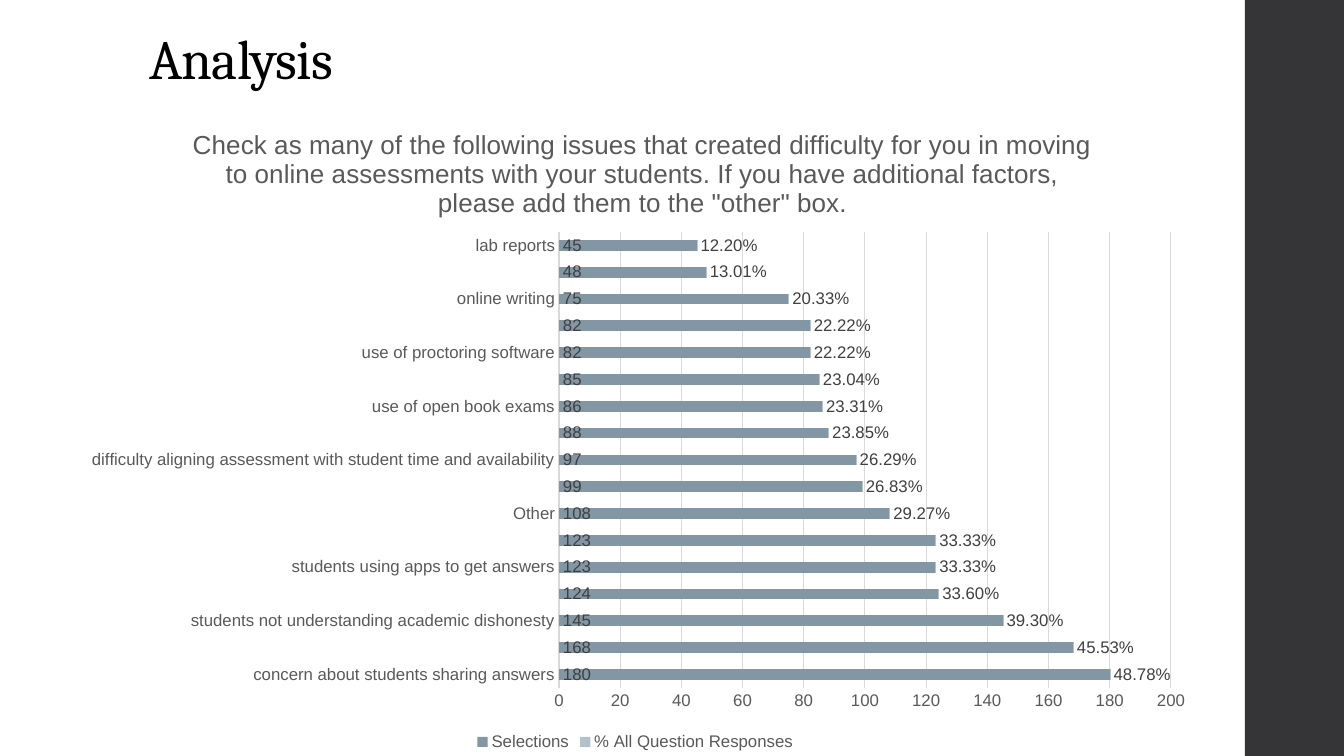
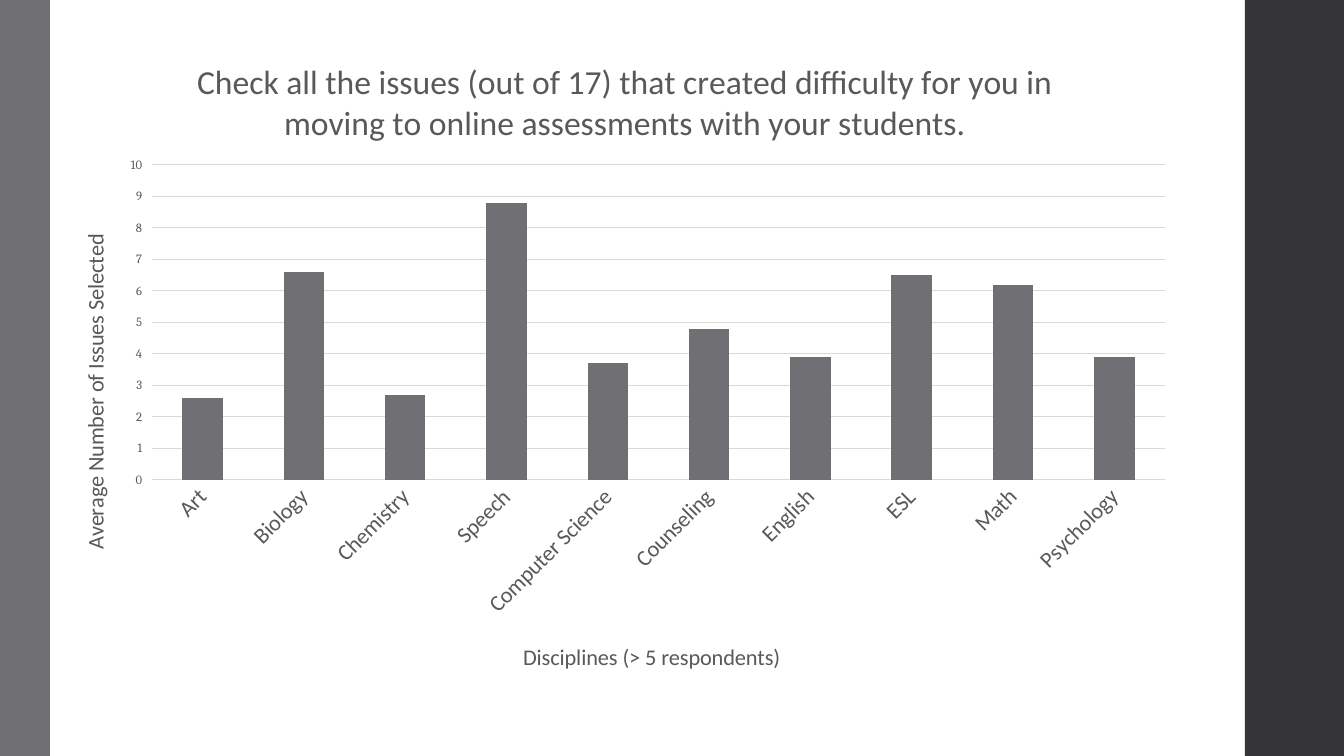
from dataclasses import dataclass

from lxml import etree
from pptx import Presentation
from pptx.chart.data import CategoryChartData
from pptx.dml.color import RGBColor
from pptx.enum.chart import XL_CHART_TYPE, XL_LABEL_POSITION, XL_LEGEND_POSITION, XL_TICK_MARK
from pptx.enum.shapes import MSO_SHAPE
from pptx.enum.text import MSO_ANCHOR, MSO_AUTO_SIZE, PP_ALIGN
from pptx.oxml.ns import qn
from pptx.util import Emu, Pt

PX = 914400 / 100.8
RECTANGLE = MSO_SHAPE.RECTANGLE
BAR_STACKED = XL_CHART_TYPE.BAR_STACKED
COLUMN_CLUSTERED = XL_CHART_TYPE.COLUMN_CLUSTERED
INSIDE_BASE = XL_LABEL_POSITION.INSIDE_BASE
LEGEND_BOTTOM = XL_LEGEND_POSITION.BOTTOM
TICK_NONE = XL_TICK_MARK.NONE
TICK_OUTSIDE = XL_TICK_MARK.OUTSIDE
TITLE_ONLY, BLANK = 5, 6


@dataclass(frozen=True)
class Theme:
    background: str = "FFFFFF"
    dark_band: str = "353537"
    gray: str = "6F6F74"
    blue_gray: str = "8296A4"
    pale_blue: str = "B3C1CC"
    grid: str = "D9D9D9"
    chart_text: str = "595959"
    label_text: str = "404040"
    title_text: str = "000000"
    heading_font: str = "Cambria"
    survey_font: str = "Arial"
    discipline_font: str = "Calibri"
    title_size: float = 39.6
    survey_title_size: float = 18.6
    discipline_title_size: int = 24
    axis_title_size: int = 16
    survey_label_size: int = 12
    value_label_size: int = 9


THEME = Theme()


@dataclass(frozen=True)
class Box:
    left: int
    top: int
    width: int = 0
    height: int = 0

    def emu(self):
        return [Emu(round(length * PX)) for length in (self.left, self.top, self.width, self.height)]


SLIDE = Box(0, 0, 1344, 756)

ISSUES = [
    ("concern about students sharing answers", 180, 0.4878),
    ("not all students have access to specialized equipment (microscopes, keyboards, etc)", 168, 0.4553),
    ("students not understanding academic dishonesty", 145, 0.393),
    ("time requirement for students", 124, 0.336),
    ("students using apps to get answers", 123, 0.3333),
    ("students plagiarizing work online while taking assessments", 123, 0.3333),
    ("Other", 108, 0.2927),
    ("grades on various assessments higher online than they were in person", 99, 0.2683),
    ("difficulty aligning assessment with student time and availability", 97, 0.2629),
    ("issues with multiple choice quizzes and exams", 88, 0.2385),
    ("use of open book exams", 86, 0.2331),
    ("student authentication guaranteeing student work is student being graded", 85, 0.2304),
    ("use of proctoring software", 82, 0.2222),
    ("adequate use of discussion boards", 82, 0.2222),
    ("online writing", 75, 0.2033),
    ("no issues with online assessment", 48, 0.1301),
    ("lab reports", 45, 0.122),
]

DISCIPLINES = [
    ("Art", 2.6), ("Biology", 6.6), ("Chemistry", 2.7), ("Speech", 8.8),
    ("Computer Science", 3.7), ("Counseling", 4.8), ("English", 3.9),
    ("ESL", 6.5), ("Math", 6.2), ("Psychology", 3.9),
]


def color(value):
    return RGBColor.from_string(value)


def style_font(font, name, size, text_color):
    font.name = name
    font.size = Pt(size)
    font.bold = False
    font.color.rgb = color(text_color)


def add_band(slide, box, fill):
    shape = slide.shapes.add_shape(RECTANGLE, *box.emu())
    shape.shadow.inherit = False
    shape.fill.solid()
    shape.fill.fore_color.rgb = color(fill)
    shape.line.fill.background()


def new_slide(presentation, layout):
    slide = presentation.slides.add_slide(presentation.slide_layouts[layout])
    slide.background.fill.solid()
    slide.background.fill.fore_color.rgb = color(THEME.background)
    add_band(slide, Box(1245, 0, 99, SLIDE.height), THEME.dark_band)
    return slide


def set_title(slide, box, text):
    title = slide.shapes.title
    title.left, title.top, title.width, title.height = box.emu()
    frame = title.text_frame
    frame.word_wrap = True
    frame.auto_size = MSO_AUTO_SIZE.NONE
    frame.vertical_anchor = MSO_ANCHOR.BOTTOM
    paragraph = frame.paragraphs[0]
    paragraph.alignment = PP_ALIGN.LEFT
    paragraph.line_spacing = 0.9
    run = paragraph.add_run()
    run.text = text
    style_font(run.font, THEME.heading_font, THEME.title_size, THEME.title_text)
    for properties in title.element.iter(qn("a:rPr")):
        properties.set("spc", "-50")


def place_part(element, predecessor, chart_box, part_box, inner=False):
    for layout in element.findall(qn("c:layout")):
        element.remove(layout)
    layout = etree.Element(qn("c:layout"))
    manual = etree.SubElement(layout, qn("c:manualLayout"))
    settings = [("layoutTarget", "inner")] if inner else []
    settings += [("xMode", "edge"), ("yMode", "edge"),
                 ("x", part_box.left / chart_box.width), ("y", part_box.top / chart_box.height)]
    if part_box.width:
        settings += [("w", part_box.width / chart_box.width), ("h", part_box.height / chart_box.height)]
    for tag, value in settings:
        etree.SubElement(manual, qn("c:" + tag)).set("val", str(value))
    position = element.index(element.find(qn(predecessor))) + 1 if predecessor else 0
    element.insert(position, layout)


def set_chart_text(title, chart_box, part_box, text, font_name, size, rotation=0):
    paragraph = title.text_frame.paragraphs[0]
    style_font(paragraph.font, font_name, size, THEME.chart_text)
    run = paragraph.add_run()
    run.text = text
    style_font(run.font, font_name, size, THEME.chart_text)
    for body in title.element.iter(qn("a:bodyPr")):
        body.set("rot", str(rotation * 60000))
    place_part(title.element, "c:tx", chart_box, part_box)


def add_bar_chart(slide, box, plot_box, kind, rows, series_styles, scale, font_name):
    data = CategoryChartData()
    categories, *columns = zip(*rows)
    data.categories = categories
    for (name, fill, number_format), values in zip(series_styles, columns):
        data.add_series(name, values, number_format)
    chart = slide.shapes.add_chart(kind, *box.emu(), data).chart
    style_font(chart.font, font_name, 10, THEME.title_text)
    chart.has_legend = False
    plot = chart.plots[0]
    plot.gap_width = 150
    plot.vary_by_categories = False
    for series, (name, fill, number_format) in zip(plot.series, series_styles):
        series.format.fill.solid()
        series.format.fill.fore_color.rgb = color(fill)
        series.invert_if_negative = False
    category_axis, value_axis = chart.category_axis, chart.value_axis
    category_axis.major_tick_mark = TICK_NONE
    category_axis.has_major_gridlines = False
    value_axis.minimum_scale = 0
    value_axis.maximum_scale, value_axis.major_unit = scale
    value_axis.has_major_gridlines = True
    value_axis.format.line.fill.background()
    for line in (category_axis.format.line, value_axis.major_gridlines.format.line):
        line.color.rgb = color(THEME.grid)
        line.width = Pt(0.75)
    place_part(chart.element.find(".//" + qn("c:plotArea")), None, box, plot_box, inner=True)
    return chart


def survey_chart(slide, box):
    series_styles = [
        ("Selections", THEME.blue_gray, "General"),
        ("% All Question Responses", THEME.pale_blue, "0.00%"),
    ]
    font_name, size = THEME.survey_font, THEME.survey_label_size
    chart = add_bar_chart(slide, box, Box(489, 135, 612, 456), BAR_STACKED,
                          ISSUES, series_styles, (200, 20), font_name)
    chart.plots[0].overlap = 100
    chart.has_title = True
    set_chart_text(
        chart.chart_title, box, Box(118, 25),
        "Check as many of the following issues that created difficulty for you in moving "
        "to online assessments with your students. If you have additional factors, "
        'please add them to the "other" box.',
        font_name, THEME.survey_title_size)
    for axis in (chart.category_axis, chart.value_axis):
        axis.major_tick_mark = TICK_NONE
        style_font(axis.tick_labels.font, font_name, size, THEME.chart_text)
    for series, (name, fill, number_format) in zip(chart.plots[0].series, series_styles):
        labels = series.data_labels
        labels.show_value = True
        labels.number_format = number_format
        labels.number_format_is_linked = False
        labels.position = INSIDE_BASE
        style_font(labels.font, font_name, size, THEME.label_text)
    chart.has_legend = True
    chart.legend.position = LEGEND_BOTTOM
    chart.legend.include_in_layout = False
    style_font(chart.legend.font, font_name, size, THEME.chart_text)
    place_part(chart.element.find(".//" + qn("c:legend")), "c:legendPos", box, Box(402, 634))


def discipline_chart(slide, box):
    chart = add_bar_chart(slide, box, Box(102, 141, 1013, 315), COLUMN_CLUSTERED, DISCIPLINES,
                          [("Series 1", THEME.gray, "General")], (10, 1), THEME.heading_font)
    font_name, size = THEME.discipline_font, THEME.axis_title_size
    chart.has_title = True
    set_chart_text(
        chart.chart_title, box, Box(141, 29),
        "Check all the issues (out of 17) that created difficulty for you in "
        "moving to online assessments with your students.",
        font_name, THEME.discipline_title_size)
    category_axis, value_axis = chart.category_axis, chart.value_axis
    value_axis.major_tick_mark = TICK_OUTSIDE
    style_font(category_axis.tick_labels.font, font_name, size, THEME.chart_text)
    style_font(value_axis.tick_labels.font, THEME.heading_font, THEME.value_label_size, THEME.chart_text)
    label_path = "/".join(qn(tag) for tag in ("c:catAx", "c:txPr", "a:bodyPr"))
    chart.element.find(".//" + label_path).set("rot", str(-45 * 60000))
    set_chart_text(category_axis.axis_title, box, Box(469, 614),
                   "Disciplines (> 5 respondents)", font_name, size)
    set_chart_text(value_axis.axis_title, box, Box(26, 206),
                   "Average Number of Issues Selected", font_name, size, rotation=-90)


def analysis_slide(presentation):
    slide = new_slide(presentation, TITLE_ONLY)
    set_title(slide, Box(139, 40, 1068, 57), "Analysis")
    survey_chart(slide, Box(70, 97, 1138, 659))


def discipline_slide(presentation):
    slide = new_slide(presentation, BLANK)
    add_band(slide, Box(0, 0, 50, SLIDE.height), THEME.gray)
    discipline_chart(slide, Box(50, 24, 1137, 665))


def main():
    presentation = Presentation()
    presentation.slide_width, presentation.slide_height = SLIDE.emu()[2:]
    analysis_slide(presentation)
    discipline_slide(presentation)
    presentation.save("out.pptx")


if __name__ == "__main__":
    main()
